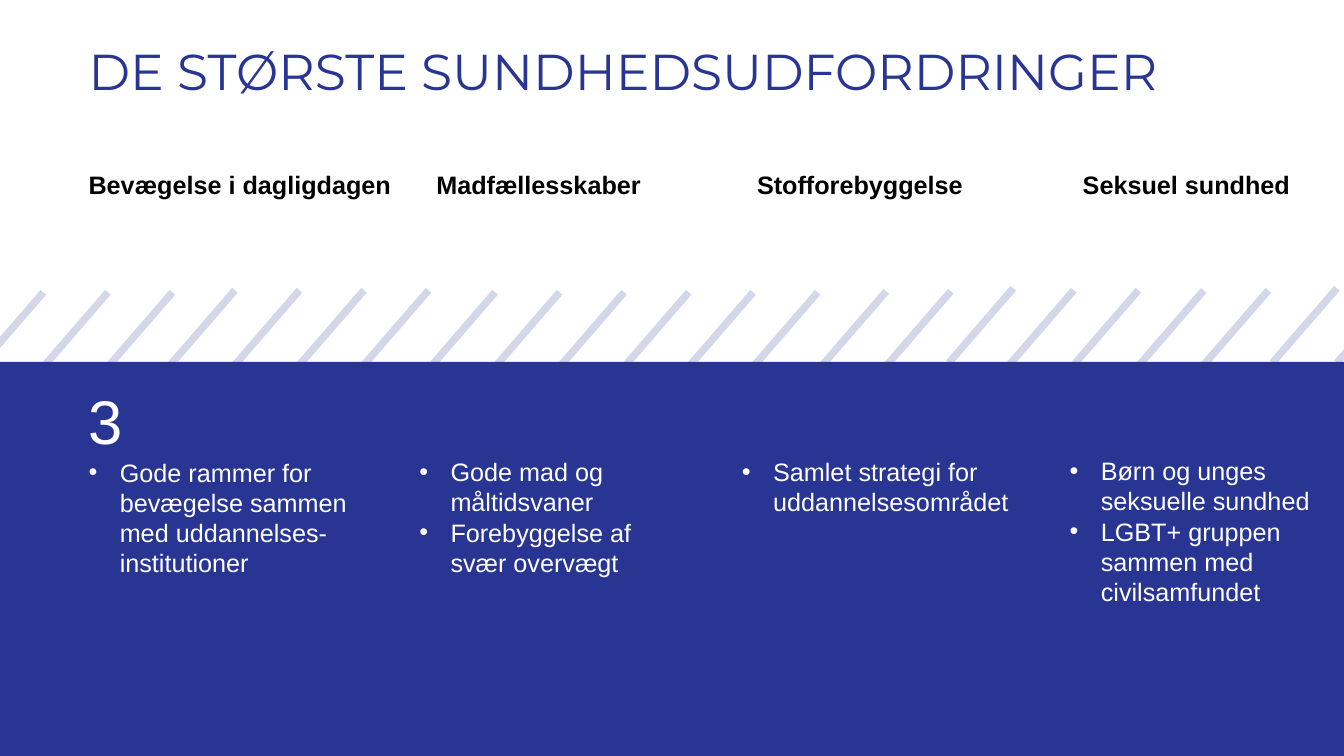
from pptx import Presentation
from pptx import util as u
from pptx.dml.color import RGBColor
from pptx.enum import shapes, text
from pptx.oxml.ns import qn
from lxml import etree

COLORS = {"blue": "283593", "white": "FFFFFF", "black": "000000"}
COLUMNS, ROWS = 13.33, 7.5
CELL = u.Inches(1)

HEADING_TOP, HEADING_HEIGHT = 1.63, 0.4
HEADINGS = [
    ("Bevægelse i dagligdagen", 0.78, 3.41),
    ("Madfællesskaber", 4.23, 3.13),
    ("Stofforebyggelse", 7.41, 3.52),
    ("Seksuel sundhed", 10.64, 3.52),
]
ACTIONS = [
    ((0.78, 3.75, 3.15, 2.12), "3",
     ["Gode rammer for bevægelse sammen med uddannelses-institutioner"]),
    ((4.06, 4.48, 2.92, 1.62), None,
     ["Gode mad og måltidsvaner", "Forebyggelse af svær overvægt"]),
    ((7.26, 4.48, 3.04, 3.13), None,
     ["Samlet strategi for uddannelsesområdet"]),
    ((10.51, 4.47, 2.69, 1.92), None,
     ["Børn og unges seksuelle sundhed",
      "LGBT+ gruppen sammen med civilsamfundet"]),
]
# Each group of stripes: count, left of the first, top
STRIPES = [(3, -0.21, 2.9), (4, 1.69, 2.88), (4, 4.27, 2.9), (2, 6.83, 2.9),
           (2, 8.15, 2.89), (1, 9.41, 2.86), (2, 10.01, 2.88),
           (2, 11.3, 2.88), (2, 12.62, 2.86)]
STRIPE_WIDTH, STRIPE_HEIGHT = 0.64, 0.74


def color(name):
    return RGBColor.from_string(COLORS[name])


def cells(*counts):
    """Turn numbers of grid cells into lengths."""
    return [round(count * CELL) for count in counts]


class SlideBuilder:
    def __init__(self, page, font="Arial", size=18):
        self.page, self.font, self.size = page, font, size

    def band(self, left, top, width, height, fill):
        band = self.page.shapes.add_shape(
            shapes.MSO_SHAPE.RECTANGLE, *cells(left, top, width, height))
        band.shadow.inherit = False
        band.fill.solid()
        band.fill.fore_color.rgb = color(fill)
        band.line.fill.background()

    def stripe(self, left, top):
        """Draw a pale slanted line rising to the right."""
        stripe = self.page.shapes.add_connector(
            shapes.MSO_CONNECTOR.STRAIGHT,
            *cells(left, top + STRIPE_HEIGHT, left + STRIPE_WIDTH, top))
        stripe.line.width = u.Pt(5.25)
        stripe.line.color.rgb = color("blue")
        properties = stripe._element.spPr
        tint = next(properties.iter(qn("a:srgbClr")))
        etree.SubElement(tint, qn("a:alpha"), val="20000")
        etree.SubElement(properties, qn("a:effectLst"))

    def box(self, left, top, width, height):
        frame = self.page.shapes.add_textbox(
            *cells(left, top, width, height)).text_frame
        frame.word_wrap = True
        frame.auto_size = text.MSO_AUTO_SIZE.SHAPE_TO_FIT_TEXT
        return frame

    def style(self, para, fill, size=None, font=None, bold=False):
        para.font.name = font or self.font
        para.font.size = u.Pt(size or self.size)
        para.font.bold = bold
        para.font.color.rgb = color(fill)

    def label(self, words, area, fill, **looks):
        para = self.box(*area).paragraphs[0]
        para.text = words
        self.style(para, fill, **looks)

    def bullets(self, area, number, items):
        """List the items, under a large number if there is one."""
        frame = self.box(*area)
        lines = ([number] if number else []) + items
        for index, words in enumerate(lines):
            para = frame.add_paragraph() if index else frame.paragraphs[0]
            para.text = words
            if words == number:
                self.style(para, "white", size=44)
                continue
            properties = para._p.get_or_add_pPr()
            indent = round(0.31 * CELL)
            properties.set("marL", str(indent))
            properties.set("indent", str(-indent))
            etree.SubElement(properties, qn("a:buFont"), typeface="Arial")
            etree.SubElement(properties, qn("a:buChar"), char="•")
            self.style(para, "white")


def main():
    deck = Presentation()
    deck.slide_width, deck.slide_height = cells(COLUMNS, ROWS)
    builder = SlideBuilder(deck.slides.add_slide(deck.slide_layouts[6]))

    builder.band(0, 3.59, COLUMNS, ROWS - 3.59, "blue")
    builder.label("DE STØRSTE SUNDHEDSUDFORDRINGER", (0.78, 0.35, 11.7, 0.71),
                  "blue", size=36, font="Montserrat")
    for words, left, width in HEADINGS:
        builder.label(words, (left, HEADING_TOP, width, HEADING_HEIGHT),
                      "black", bold=True)
    for count, left, top in STRIPES:
        for index in range(count):
            builder.stripe(left + index * STRIPE_WIDTH, top)
    for area, number, items in ACTIONS:
        builder.bullets(area, number, items)

    deck.save("out.pptx")


if __name__ == "__main__":
    main()
